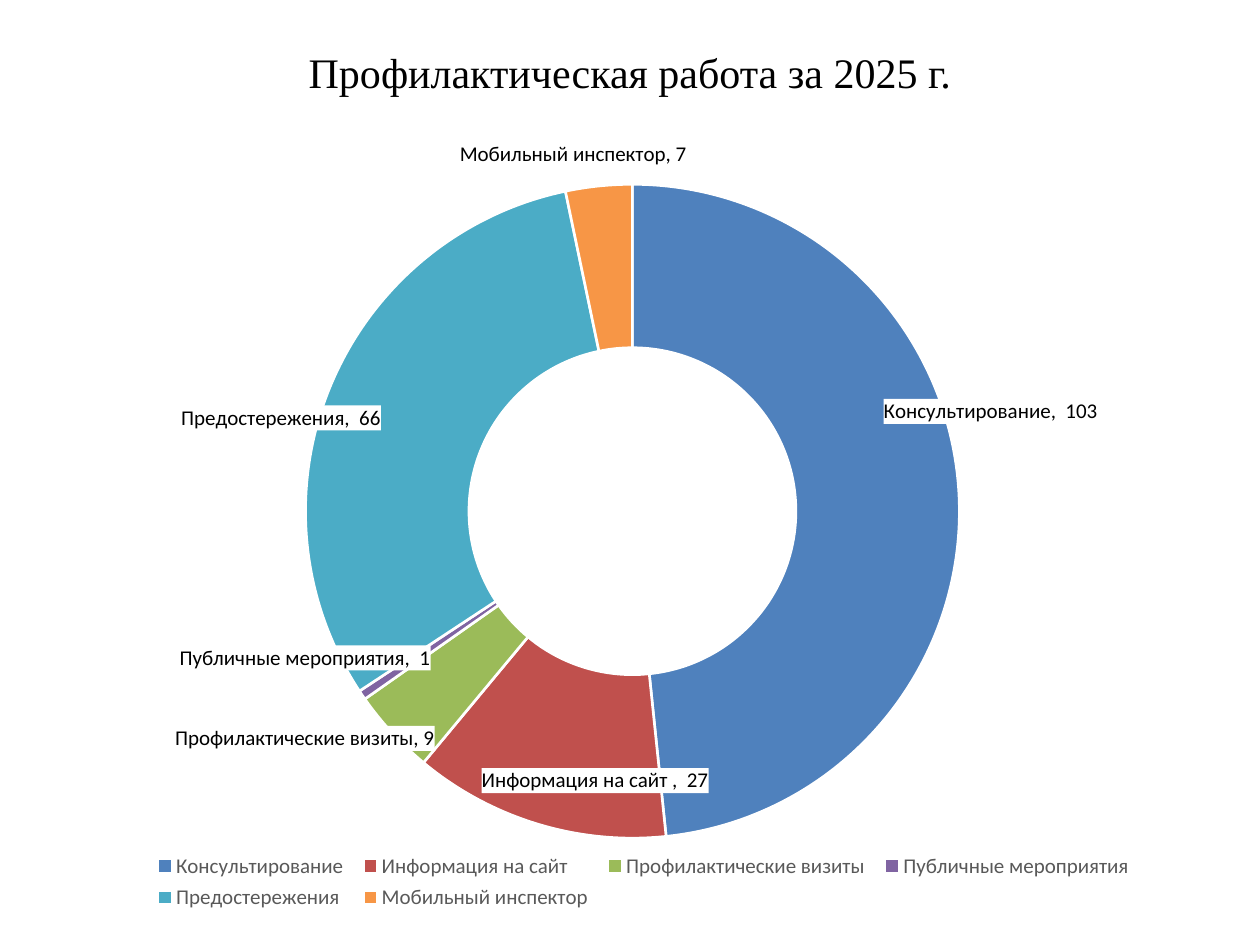
import pptx
import pptx.chart.data
import pptx.dml.color
import pptx.enum.chart
import pptx.enum.text
import pptx.oxml
import pptx.oxml.ns
import pptx.util
from pptx.util import Inches

# Category, value, colour, label offset as a share of the chart, custom label text
ACTIVITIES = [
    ("Консультирование", 103, "4F81BD", (0.10, -0.10), "Консультирование,  103"),
    ("Информация на сайт ", 27, "C0504D", (0.03, 0.04), "Информация на сайт ,  27"),
    ("Профилактические визиты", 9, "9BBB59", (-0.13, 0.07), None),
    ("Публичные мероприятия", 1, "8064A2", (-0.11, 0.01), "Публичные мероприятия,  1"),
    ("Предостережения", 66, "4BACC6", (-0.11, 0), "Предостережения,  66"),
    ("Мобильный инспектор", 7, "F79646", (-0.03, -0.13), None),
]


def rgb(color):
    return pptx.dml.color.RGBColor.from_string(color)


def format_font(font, name, size, color):
    font.name = name
    font.size = pptx.util.Pt(size)
    font.bold = False
    font.color.rgb = rgb(color)


def chart_xml(body):
    namespaces = pptx.oxml.ns.nsdecls("c", "a")
    return pptx.oxml.parse_xml(body.replace(">", f" {namespaces}>", 1))


def manual_layout(**settings):
    values = "".join(f'<c:{name} val="{value}"/>' for name, value in settings.items())
    return chart_xml(f"<c:layout><c:manualLayout>{values}</c:manualLayout></c:layout>")


def add_title(slide, text):
    title = slide.shapes.title
    title.left, title.top = Inches(0.5), Inches(0.3)
    title.width, title.height = Inches(9), Inches(0.54)
    frame = title.text_frame
    frame.text = text
    frame.vertical_anchor = pptx.enum.text.MSO_ANCHOR.MIDDLE
    paragraph = frame.paragraphs[0]
    paragraph.alignment = pptx.enum.text.PP_ALIGN.CENTER
    format_font(paragraph.runs[0].font, "Times New Roman", 24, "000000")


def add_doughnut(slide):
    data = pptx.chart.data.CategoryChartData()
    data.categories = [activity[0] for activity in ACTIVITIES]
    data.add_series("Series 1", [activity[1] for activity in ACTIVITIES])
    chart = slide.shapes.add_chart(
        pptx.enum.chart.XL_CHART_TYPE.DOUGHNUT,
        Inches(0.43), Inches(0.84), Inches(9), Inches(6.92), data).chart
    chart.has_title = False
    format_font(chart.font, "Calibri", 10, "000000")
    set_plot_area(chart)
    add_legend(chart)
    return chart


def set_plot_area(chart):
    plot_area = chart._chartSpace.xpath("c:chart/c:plotArea")[0]
    for layout in plot_area.xpath("c:layout"):
        plot_area.remove(layout)
    plot_area.insert(0, manual_layout(
        layoutTarget="inner", xMode="edge", yMode="edge",
        x=0.22, y=0.09, w=0.58, h=0.75))


def add_legend(chart):
    chart.has_legend = True
    legend = chart.legend
    legend.position = pptx.enum.chart.XL_LEGEND_POSITION.BOTTOM
    legend.include_in_layout = False
    format_font(legend.font, "Calibri", 12, "595959")
    for layout in legend._element.xpath("c:layout"):
        legend._element.remove(layout)
    legend._element.xpath("c:legendPos")[0].addnext(manual_layout(
        xMode="edge", yMode="edge", x=0.08, y=0.85, w=0.88, h=0.08))


def format_segments(series):
    labels = series.data_labels
    labels.show_value = True
    labels.show_category_name = True
    labels.show_percentage = False
    format_font(labels.font, "Calibri", 12, "000000")
    for index, (_, _, color, _, label_text) in enumerate(ACTIVITIES):
        point = series.points[index]
        point.format.fill.solid()
        point.format.fill.fore_color.rgb = rgb(color)
        point.format.line.color.rgb = rgb("FFFFFF")
        point.format.line.width = pptx.util.Pt(1.5)
        label = point.data_label
        if label_text:
            label.text_frame.text = label_text
            font = label.text_frame.paragraphs[0].runs[0].font
        else:
            font = label.font
        format_font(font, "Calibri", 12, "000000")


def place_labels(series):
    """Move each label by its offset, on white and without leader lines."""
    for leader_lines in series._element.xpath("c:dLbls/c:showLeaderLines"):
        leader_lines.set("val", "0")
    for label, activity in zip(series._element.xpath("c:dLbls/c:dLbl"), ACTIVITIES):
        x, y = activity[3]
        label.xpath("c:idx")[0].addnext(manual_layout(x=x, y=y))
        for shape_format in label.xpath("c:spPr"):
            label.remove(shape_format)
        label.xpath("c:txPr | c:showLegendKey")[0].addprevious(chart_xml(
            '<c:spPr><a:solidFill><a:srgbClr val="FFFFFF"/></a:solidFill></c:spPr>'))
        label.xpath("c:showCatName")[0].set("val", "1")
        label.xpath("c:showBubbleSize")[0].addnext(
            chart_xml("<c:separator>, </c:separator>"))


def main():
    presentation = pptx.Presentation()
    presentation.slide_width = Inches(10)
    presentation.slide_height = Inches(7.5)
    slide = presentation.slides.add_slide(presentation.slide_layouts[5])
    add_title(slide, "Профилактическая работа за 2025 г.")
    chart = add_doughnut(slide)
    series = chart.plots[0].series[0]
    format_segments(series)
    place_labels(series)
    presentation.save("out.pptx")


if __name__ == "__main__":
    main()
